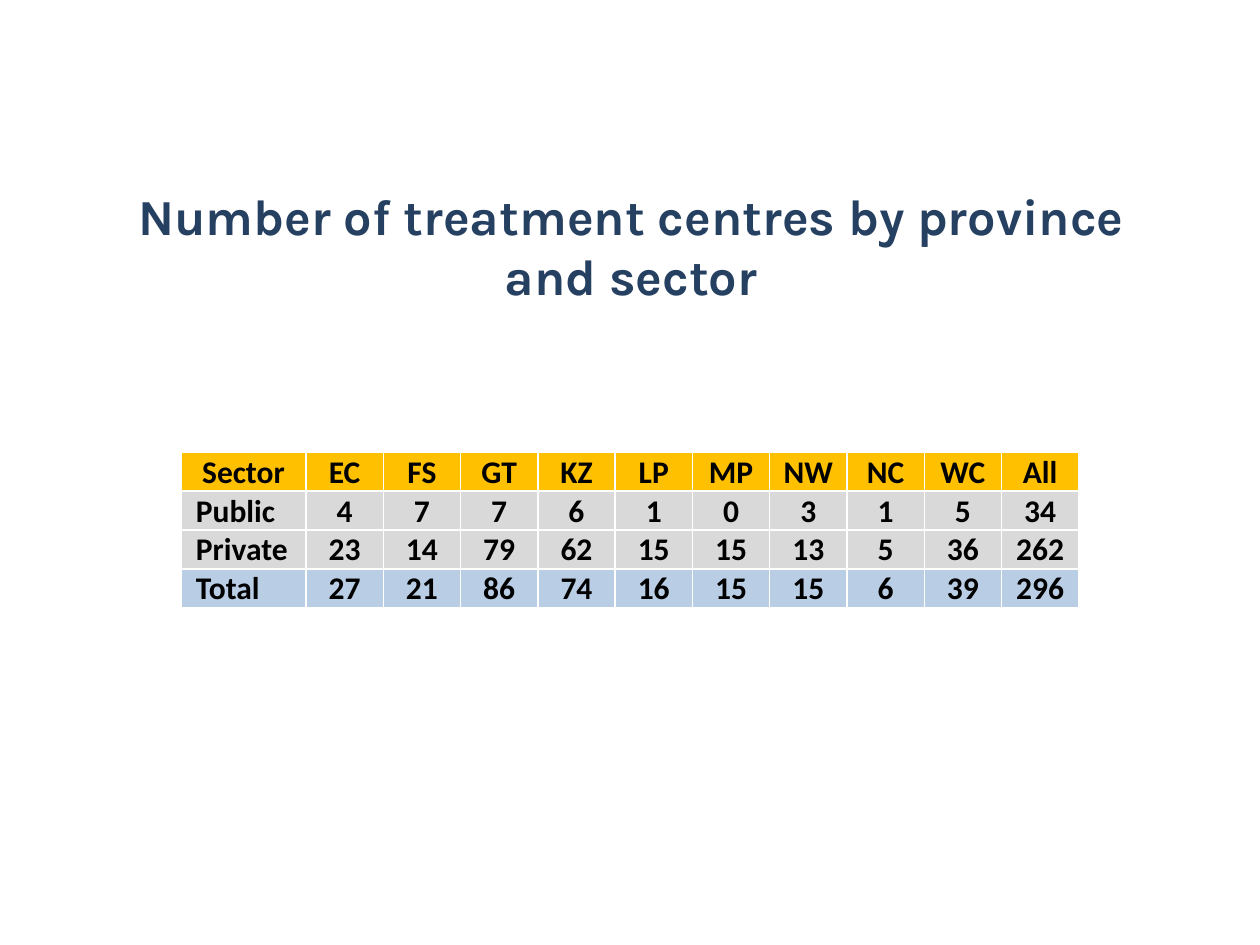
from dataclasses import dataclass

from lxml.etree import SubElement
from pptx import Presentation
from pptx.dml.color import RGBColor
from pptx.enum.text import MSO_ANCHOR, PP_ALIGN
from pptx.oxml.ns import qn
from pptx.util import Emu, Pt

EMU_PER_PX = 914400 // 126


@dataclass(frozen=True)
class Theme:
    title_font: str = "Karla"
    table_font: str = "Calibri"
    title_size: float = 28.8
    table_size: float = 18
    border_width: float = 1
    title_color: str = "254061"
    table_color: str = "000000"
    border: str = "FFFFFF"
    header_fill: str = "FFC000"
    sector_fill: str = "D9D9D9"
    total_fill: str = "B9CDE5"


THEME = Theme()

HEADER = ["Sector", "EC", "FS", "GT", "KZ", "LP", "MP", "NW", "NC", "WC", "All"]
CENTRES = [
    ["Public", 4, 7, 7, 6, 1, 0, 3, 1, 5, 34],
    ["Private", 23, 14, 79, 62, 15, 15, 13, 5, 36, 262],
    ["Total", 27, 21, 86, 74, 16, 15, 15, 6, 39, 296],
]


def px(length):
    return Emu(round(length * EMU_PER_PX))


def set_attributes(target, values):
    for name, value in values.items():
        setattr(target, name, value)


def write_text(paragraph, text, align, font, size, color):
    paragraph.alignment = align
    run = paragraph.add_run()
    run.text = text
    set_attributes(run.font, {"name": font, "size": Pt(size), "bold": True})
    run.font.color.rgb = RGBColor.from_string(color)


def add_title(slide, left, top, width, height, text):
    title = slide.shapes.add_textbox(px(left), px(top), px(width), px(height))
    frame = title.text_frame
    set_attributes(frame, {"word_wrap": True, "vertical_anchor": MSO_ANCHOR.MIDDLE})
    write_text(frame.paragraphs[0], text, PP_ALIGN.CENTER,
               THEME.title_font, THEME.title_size, THEME.title_color)


def add_borders(cell):
    properties = cell._tc.get_or_add_tcPr()
    for side in ("a:lnL", "a:lnR", "a:lnT", "a:lnB"):
        line = SubElement(properties, qn(side), w=str(Pt(THEME.border_width)))
        fill = SubElement(line, qn("a:solidFill"))
        SubElement(fill, qn("a:srgbClr"), val=THEME.border)


def format_cell(cell, text, fill, is_sector_name):
    """Sector names are indented from the left; everything else is centred."""
    set_attributes(cell, {
        "margin_left": px(15 if is_sector_name else 1),
        "margin_right": px(1),
        "margin_top": px(1),
        "margin_bottom": 0,
        "vertical_anchor": MSO_ANCHOR.MIDDLE,
    })
    add_borders(cell)
    cell.fill.solid()
    cell.fill.fore_color.rgb = RGBColor.from_string(fill)
    align = PP_ALIGN.LEFT if is_sector_name else PP_ALIGN.CENTER
    write_text(cell.text_frame.paragraphs[0], text, align,
               THEME.table_font, THEME.table_size, THEME.table_color)


def add_centres_table(slide, left, top, width, height, header, centres):
    rows = [header, *centres]
    fills = [THEME.header_fill, *[THEME.sector_fill] * (len(centres) - 1), THEME.total_fill]
    table = slide.shapes.add_table(len(rows), len(header), px(left), px(top),
                                   px(width), px(height)).table
    set_attributes(table, {"first_row": False, "horz_banding": False})

    sector_width = 125
    province_width = (width - sector_width) / (len(header) - 1)
    for index, column in enumerate(table.columns):
        column.width = px(province_width if index else sector_width)

    for row_index, (values, fill) in enumerate(zip(rows, fills)):
        table.rows[row_index].height = px(height / len(rows))
        for column_index, value in enumerate(values):
            format_cell(table.cell(row_index, column_index), str(value), fill,
                        is_sector_name=row_index > 0 and column_index == 0)


def main():
    presentation = Presentation()
    set_attributes(presentation, {"slide_width": px(1260), "slide_height": px(945)})
    slide = presentation.slides.add_slide(presentation.slide_layouts[6])
    add_title(slide, 115, 197, 1032, 97,
              "Number of treatment centres by province and sector")
    add_centres_table(slide, 181, 452, 898, 156, HEADER, CENTRES)
    presentation.save("out.pptx")


if __name__ == "__main__":
    main()
